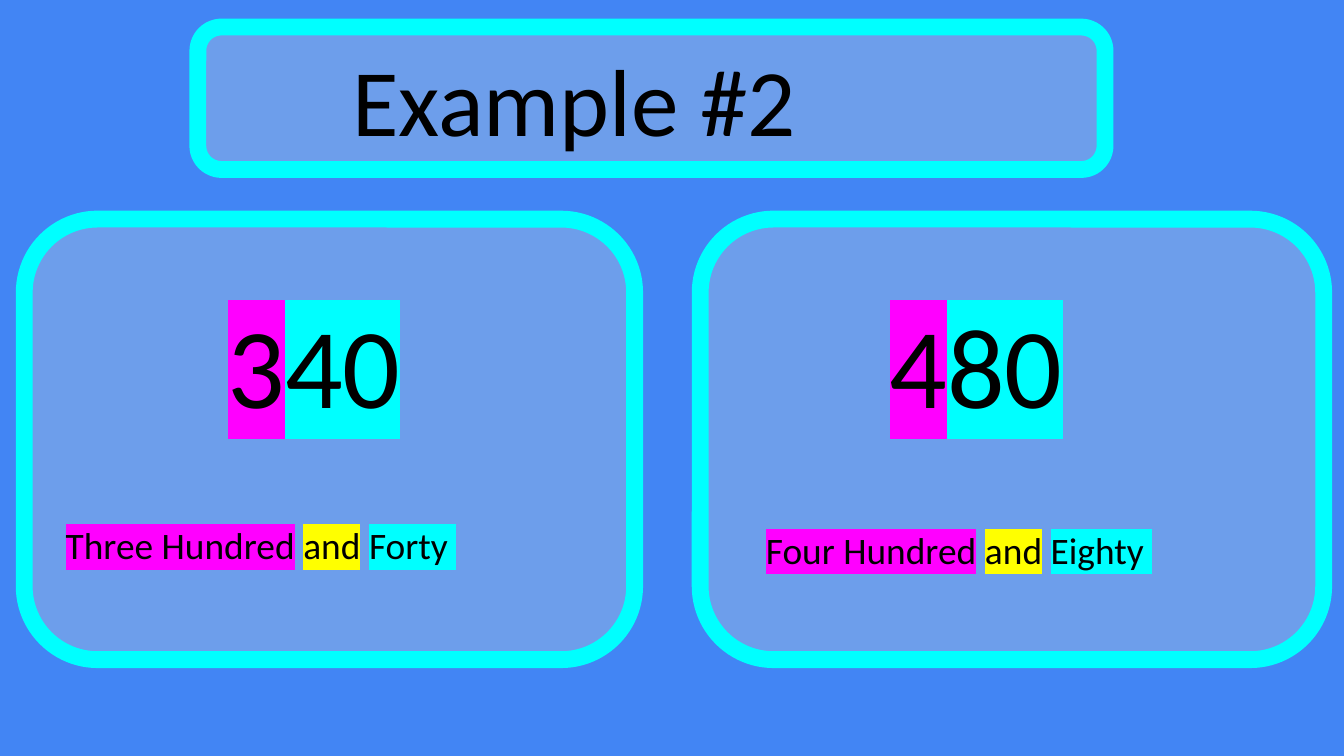
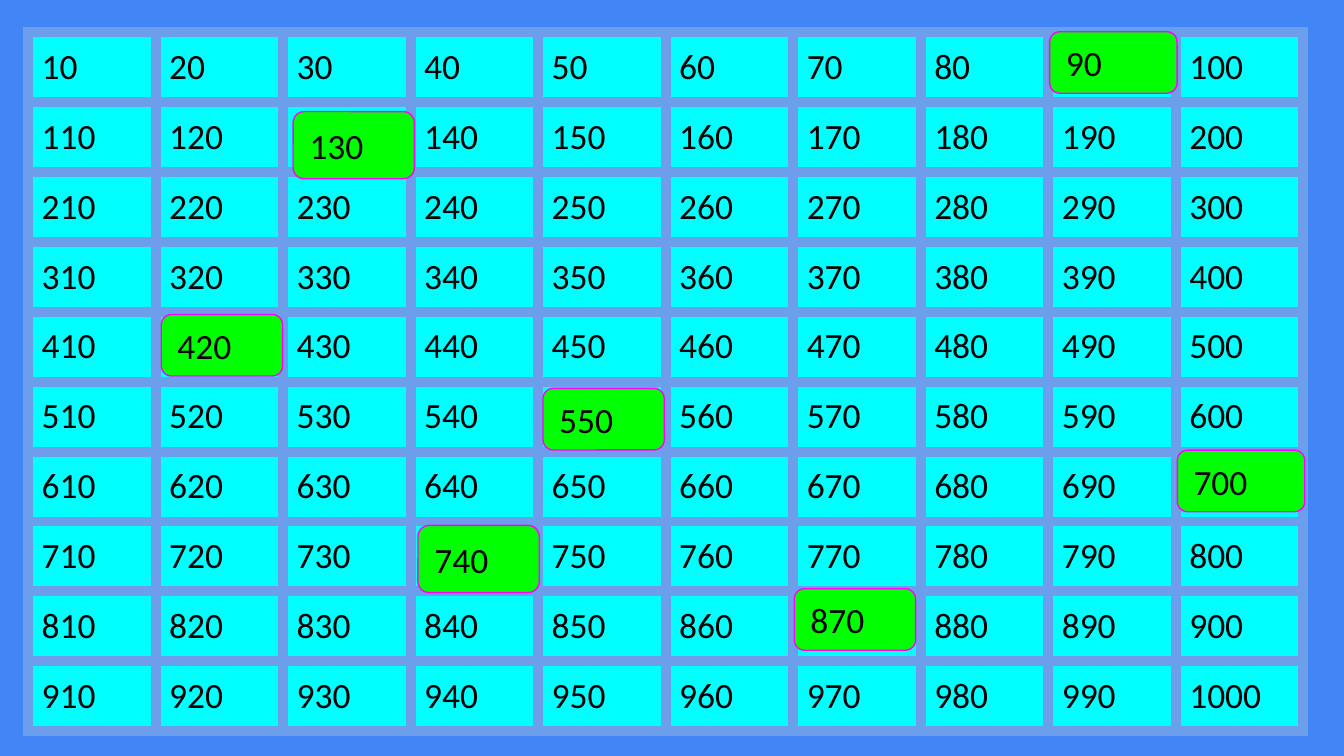
from lxml.etree import SubElement
from pptx import Presentation
from pptx.dml.color import RGBColor
from pptx.enum.shapes import MSO_SHAPE
from pptx.enum.text import MSO_ANCHOR, PP_ALIGN
from pptx.oxml.ns import qn
from pptx.util import Pt

BLUE = RGBColor(0x42, 0x85, 0xF4)
SOFT_BLUE = RGBColor(0x6D, 0x9E, 0xEB)
CYAN = RGBColor(0x00, 0xFF, 0xFF)
MAGENTA = RGBColor(0xFF, 0x00, 0xFF)
YELLOW = RGBColor(0xFF, 0xFF, 0x00)
GREEN = RGBColor(0x00, 0xFF, 0x00)
BLACK = RGBColor(0x00, 0x00, 0x00)

FONT = "Calibri"
INSET = 7.2
GRID_SIZE = 10

# number: (left, top, width, height) of the tile that covers its cell
TILES = {
    870: (425.5, 315.4, 65, 33),
    700: (630.7, 241.2, 68.3, 33),
    90: (562.3, 17, 68.3, 33),
    420: (86.4, 168.5, 65, 33),
    550: (290.9, 208.1, 65, 33),
    740: (223.9, 281.5, 65, 36),
    130: (157, 59.8, 65, 36),
}


def new_slide(deck):
    slide = deck.slides.add_slide(deck.slide_layouts[6])
    slide.background.fill.solid()
    slide.background.fill.fore_color.rgb = BLUE
    return slide


def style_paragraph(paragraph, size, indent=0):
    paragraph.font.name = FONT
    paragraph.font.size = Pt(size)
    paragraph.font.color.rgb = BLACK
    paragraph.alignment = PP_ALIGN.LEFT
    if indent:
        paragraph._p.get_or_add_pPr().set("marL", str(Pt(indent)))


def set_insets(holder, top=INSET):
    """Set the margins of a text frame or a table cell."""
    holder.margin_left = holder.margin_right = holder.margin_bottom = Pt(INSET)
    holder.margin_top = Pt(top)


def rounded_box(slide, box, fill, line, line_width):
    outline = slide.shapes.add_shape(MSO_SHAPE.ROUNDED_RECTANGLE, *map(Pt, box))
    outline.shadow.inherit = False
    outline.fill.solid()
    outline.fill.fore_color.rgb = fill
    outline.line.color.rgb = line
    outline.line.width = Pt(line_width)
    return outline


def label_box(outline, text, size, indent=0):
    frame = outline.text_frame
    set_insets(frame)
    frame.vertical_anchor = MSO_ANCHOR.MIDDLE
    frame.paragraphs[0].text = text
    style_paragraph(frame.paragraphs[0], size, indent)


def highlighted_text(slide, box, parts, size, indent=0, top_inset=INSET):
    """Write (text, highlight) parts on one line; None means no highlight."""
    frame = slide.shapes.add_textbox(*map(Pt, box)).text_frame
    frame.word_wrap = True
    set_insets(frame, top_inset)
    paragraph = frame.paragraphs[0]
    style_paragraph(paragraph, size, indent)
    for text, color in parts:
        run = paragraph.add_run()
        run.text = text
        if color is not None:
            highlight = SubElement(run._r.get_or_add_rPr(), qn("a:highlight"))
            SubElement(highlight, qn("a:srgbClr"), val=str(color))


def number_panel(slide, panel, numeral, words):
    """Draw a panel; the numeral and words boxes are relative to its corner."""
    left, top, _, _ = panel
    rounded_box(slide, panel, SOFT_BLUE, CYAN, 9)

    x, y, width, height = numeral["box"]
    hundreds, rest = numeral["digits"]
    highlighted_text(slide, (left + x, top + y, width, height),
                     [(hundreds, MAGENTA), (rest, CYAN)],
                     61, numeral["indent"])

    x, y, width, height = words["box"]
    hundreds, rest = words["names"]
    highlighted_text(slide, (left + x, top + y, width, height),
                     [(hundreds, MAGENTA), (" ", None), ("and", YELLOW),
                      (" ", None), (rest, CYAN)],
                     20, top_inset=words["top_inset"])


def example_slide(deck):
    slide = new_slide(deck)
    title = rounded_box(slide, (106, 14.5, 486, 76.3), SOFT_BLUE, CYAN, 9)
    label_box(title, "Example #2", 51, indent=72)
    number_panel(
        slide, (13, 117.4, 327, 236),
        {"digits": ("3", "40"), "box": (46.8, 33.1, 223, 96.5), "indent": 55},
        {"names": ("Three Hundred", "Forty "), "box": (15.1, 138.2, 284.4, 71.3),
         "top_inset": 31.6})
    number_panel(
        slide, (375.1, 117.4, 334, 236),
        {"digits": ("4", "80"), "box": (44.6, 33.1, 238.3, 96.5), "indent": 49.8},
        {"names": ("Four Hundred", "Eighty "), "box": (28.1, 157.7, 284.4, 51.1),
         "top_inset": INSET})


def border_cell(cell, color, width):
    properties = cell._tc.get_or_add_tcPr()
    for side in ("a:lnL", "a:lnR", "a:lnT", "a:lnB"):
        edge = SubElement(properties, qn(side), w=str(Pt(width)))
        fill = SubElement(edge, qn("a:solidFill"))
        SubElement(fill, qn("a:srgbClr"), val=str(color))


def tens_grid(slide, box):
    """Fill a grid with the tens to 1000, leaving covered cells empty."""
    grid = slide.shapes.add_table(GRID_SIZE, GRID_SIZE, *map(Pt, box)).table
    grid.first_row = grid.horz_banding = False
    _, _, width, height = box
    for column in grid.columns:
        column.width = Pt(width / GRID_SIZE)
    for row in grid.rows:
        row.height = Pt(height / GRID_SIZE)
    for index, cell in enumerate(grid.iter_cells(), start=1):
        number = index * 10
        border_cell(cell, SOFT_BLUE, 6)
        cell.fill.solid()
        cell.fill.fore_color.rgb = CYAN
        set_insets(cell)
        paragraph = cell.text_frame.paragraphs[0]
        if number not in TILES:
            paragraph.text = str(number)
        style_paragraph(paragraph, 19)


def grid_slide(deck):
    slide = new_slide(deck)
    tens_grid(slide, (15.1, 17.3, 683.3, 374.5))
    for number, box in TILES.items():
        tile = rounded_box(slide, box, GREEN, MAGENTA, 0.75)
        label_box(tile, str(number), 19)


def main():
    deck = Presentation()
    deck.slide_width, deck.slide_height = Pt(720), Pt(405)
    example_slide(deck)
    grid_slide(deck)
    deck.save("out.pptx")


if __name__ == "__main__":
    main()
